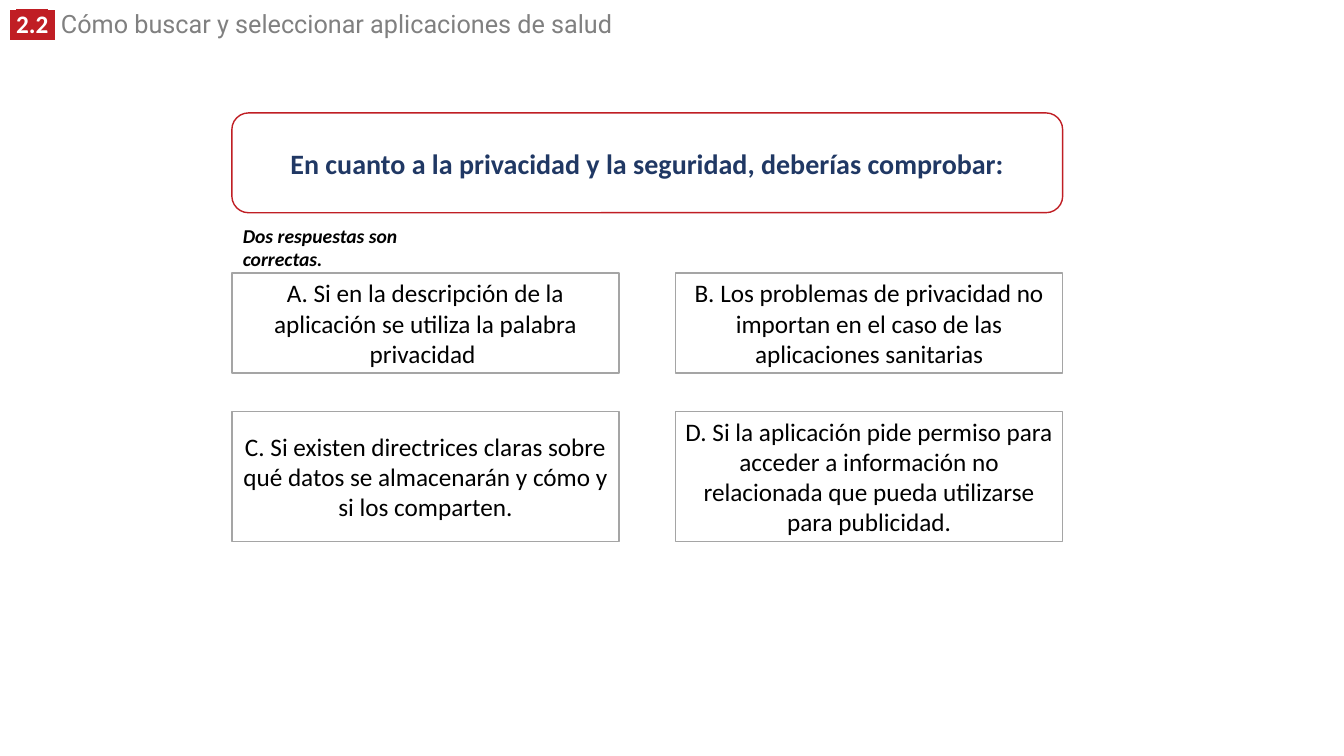
from lxml.etree import SubElement
from pptx import Presentation
from pptx.dml.color import RGBColor
from pptx.enum.shapes import MSO_SHAPE as Shape
from pptx.enum.text import MSO_ANCHOR as Anchor, PP_ALIGN as Align
from pptx.oxml.ns import qn
from pptx.util import Inches, Pt

RED = RGBColor(0xC0, 0x1E, 0x24)
NAVY = RGBColor(0x20, 0x38, 0x64)
GRAY = RGBColor(0x80, 0x80, 0x80)
BORDER = RGBColor(0xA5, 0xA5, 0xA5)
BLACK = RGBColor(0, 0, 0)
WHITE = RGBColor(0xFF, 0xFF, 0xFF)

LEFT, RIGHT = 2.3, 10.54
CARD_WIDTH = 3.84
COLUMNS = (LEFT, RIGHT - CARD_WIDTH)
ROWS = ((2.71, 0.99), (4.08, 1.29))  # top, height

deck = Presentation()
deck.slide_width, deck.slide_height = Inches(13.33), Inches(7.5)
page = deck.slides.add_slide(deck.slide_layouts[6])


def add_card(kind, left, top, width, height, border, text, size, color, bold=False):
    """Add a white outlined shape with centred text."""
    card = page.shapes.add_shape(kind, Inches(left), Inches(top), Inches(width), Inches(height))
    card.shadow.inherit = False
    card.fill.solid()
    card.fill.fore_color.rgb = WHITE
    card.line.color.rgb = border
    card.line.width = Pt(1)
    card.text_frame.word_wrap = True
    card.text_frame.vertical_anchor = Anchor.MIDDLE
    para = card.text_frame.paragraphs[0]
    para.text = text
    para.alignment = Align.CENTER
    para.font.name, para.font.size, para.font.bold = "Calibri", Pt(size), bold
    para.font.color.rgb = color


# Section heading
heading = page.shapes.add_textbox(0, Inches(0.09), Inches(9.52), Inches(0.35))
heading.text_frame.word_wrap = True
para = heading.text_frame.paragraphs[0]
para.line_spacing = 0.8
para.font.size = Pt(18)
for text, font, badge in (
    (" ", "Roboto", True),
    ("2.2", "Calibri", True),
    (" ", "Roboto", True),
    (" Cómo buscar y seleccionar aplicaciones de salud", "Roboto", False),
):
    span = para.add_run()
    span.text = text
    span.font.bold = badge
    span.font.color.rgb = WHITE if badge else GRAY
    if badge:
        highlight = SubElement(span.font._element, qn("a:highlight"))
        SubElement(highlight, qn("a:srgbClr"), val=str(RED))
    span.font.name = font

# Question
add_card(Shape.ROUNDED_RECTANGLE, LEFT, 1.12, RIGHT - LEFT, 0.99, RED,
         "En cuanto a la privacidad y la seguridad, deberías comprobar:", 20, NAVY, True)

hint = page.shapes.add_textbox(Inches(2.31), Inches(2.17), Inches(2.24), Inches(0.34))
hint.text_frame.word_wrap = True
para = hint.text_frame.paragraphs[0]
para.text = "Dos respuestas son correctas."
para.font.name, para.font.size = "Calibri", Pt(14)
para.font.bold = para.font.italic = True
para.font.color.rgb = BLACK

# Answers, row by row
answers = (
    "A. Si en la descripción de la aplicación se utiliza la palabra privacidad ",
    "B. Los problemas de privacidad no importan en el caso de las aplicaciones sanitarias",
    "C. Si existen directrices claras sobre qué datos se almacenarán y cómo y si los comparten.",
    "D. Si la aplicación pide permiso para acceder a información no relacionada "
    "que pueda utilizarse para publicidad.",
)
for index, answer in enumerate(answers):
    row, column = divmod(index, 2)
    top, height = ROWS[row]
    add_card(Shape.RECTANGLE, COLUMNS[column], top, CARD_WIDTH, height, BORDER, answer, 18, BLACK)

deck.save("out.pptx")
